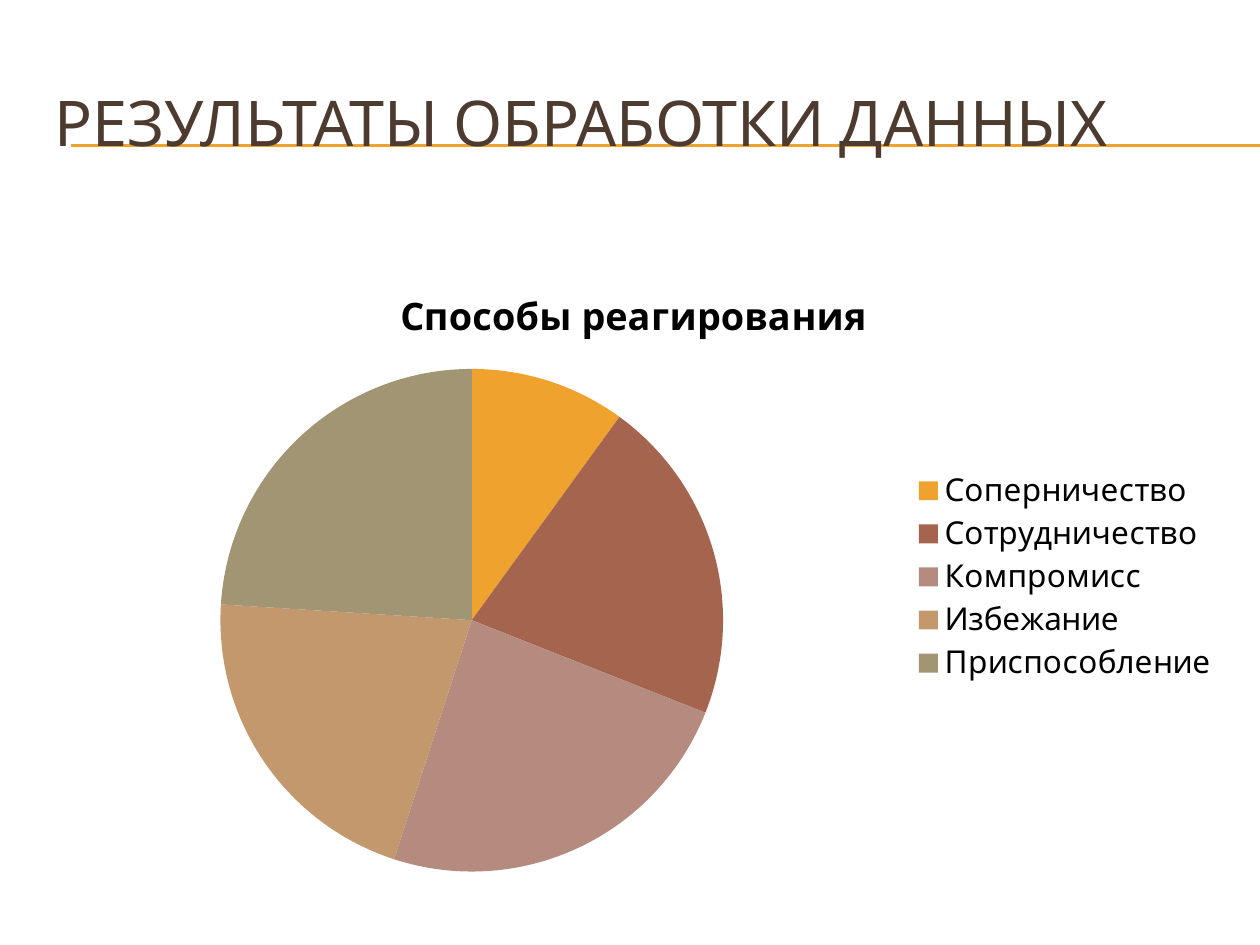
from lxml.etree import SubElement
from pptx import Presentation
from pptx.chart.data import CategoryChartData as Data
from pptx.dml.color import RGBColor
from pptx.enum.chart import XL_CHART_TYPE as Kind, XL_LEGEND_POSITION as Side
from pptx.enum.shapes import MSO_CONNECTOR as Link
from pptx.enum.text import MSO_ANCHOR as Anchor, MSO_AUTO_SIZE as Fit, PP_ALIGN as Align
from pptx.oxml.ns import qn
from pptx.util import Pt

PX = 914400 // 126
FONT = "Karla"
BLACK = RGBColor(0x00, 0x00, 0x00)
BROWN = RGBColor(0x4E, 0x3B, 0x30)
AMBER = RGBColor(0xF0, 0xA2, 0x2E)
RUST = RGBColor(0xA5, 0x64, 0x4E)
ROSE = RGBColor(0xB5, 0x8B, 0x80)
TAN = RGBColor(0xC3, 0x98, 0x6D)
OLIVE = RGBColor(0xA1, 0x95, 0x74)

WAYS = [
    ("Соперничество", 10, AMBER),
    ("Сотрудничество", 21, RUST),
    ("Компромисс", 24, ROSE),
    ("Избежание", 21, TAN),
    ("Приспособление", 24, OLIVE),
]


def style(font, size, color, bold=False):
    font.name = FONT
    font.size = Pt(size)
    font.bold = bold
    font.color.rgb = color


deck = Presentation()
deck.slide_width, deck.slide_height = 1260 * PX, 945 * PX
slide = deck.slides.add_slide(deck.slide_layouts[5])
shapes = slide.shapes

# Title
title = shapes.title
title.left, title.top = 42 * PX, 63 * PX
title.width, title.height = 1197 * PX, 116 * PX
frame = title.text_frame
frame.word_wrap = True
frame.auto_size = Fit.NONE
frame.vertical_anchor = Anchor.MIDDLE
para = frame.paragraphs[0]
para.alignment = Align.LEFT
run = para.add_run()
run.text = "РЕЗУЛЬТАТЫ ОБРАБОТКИ ДАННЫХ"
style(run.font, 36, BROWN)

# Double rule behind the title
for y in (145, 146):
    rule = shapes.add_connector(Link.STRAIGHT, 71 * PX, y * PX, 1260 * PX, y * PX)
    rule.line.color.rgb = AMBER
    rule.line.width = Pt(0.75)
    SubElement(rule._element.spPr, qn("a:effectLst"))
    title._element.addprevious(rule._element)

# Pie chart
data = Data()
data.categories = [name for name, _, _ in WAYS]
data.add_series("Способы реагирования", [value for _, value, _ in WAYS])
chart = shapes.add_chart(
    Kind.PIE, 35 * PX, 265 * PX, 1197 * PX, 624 * PX, data
).chart
style(chart.font, 18, BLACK)

chart.has_title = True
head = chart.chart_title.text_frame.paragraphs[0].add_run()
head.text = "Способы реагирования"
style(head.font, 21.6, BLACK, bold=True)
chart.chart_title.include_in_layout = False

chart.has_legend = True
chart.legend.position = Side.RIGHT
chart.legend.include_in_layout = False
style(chart.legend.font, 18, BLACK)

plot = chart.plots[0]
plot.vary_by_categories = True
for i, (_, _, color) in enumerate(WAYS):
    fill = plot.series[0].points[i].format.fill
    fill.solid()
    fill.fore_color.rgb = color

deck.save("out.pptx")
